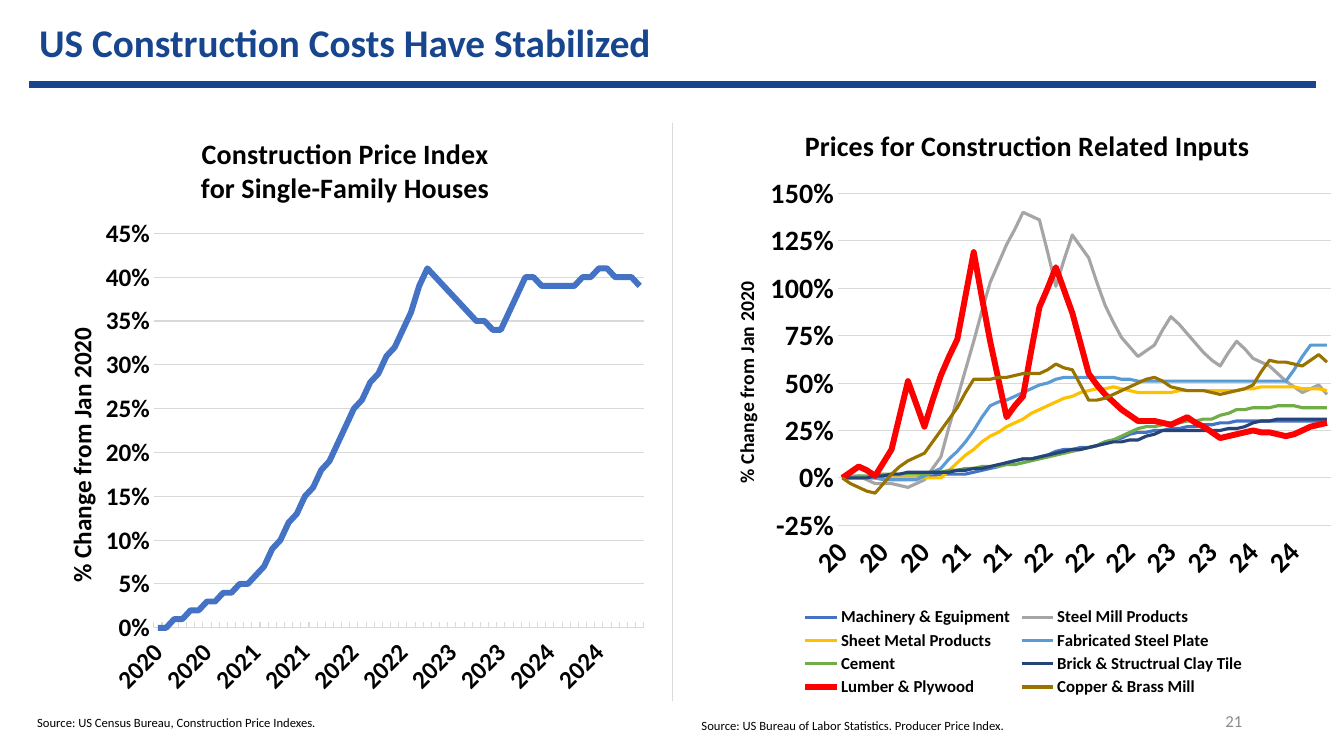
from lxml import etree
from pptx import Presentation
from pptx.chart.data import CategoryChartData
from pptx.dml.color import RGBColor
from pptx.enum.chart import XL_CHART_TYPE, XL_LEGEND_POSITION, XL_TICK_LABEL_POSITION, XL_TICK_MARK
from pptx.enum.shapes import MSO_CONNECTOR
from pptx.enum.text import MSO_ANCHOR, PP_ALIGN
from pptx.oxml.ns import qn
from pptx.util import Inches, Pt

LINE = XL_CHART_TYPE.LINE
BOTTOM = XL_LEGEND_POSITION.BOTTOM
LOW = XL_TICK_LABEL_POSITION.LOW
INSIDE, NO_TICK = XL_TICK_MARK.INSIDE, XL_TICK_MARK.NONE
STRAIGHT = MSO_CONNECTOR.STRAIGHT
LEFT, RIGHT = PP_ALIGN.LEFT, PP_ALIGN.RIGHT
TOP, MIDDLE = MSO_ANCHOR.TOP, MSO_ANCHOR.MIDDLE

THEME = {
    "font": "Calibri", "navy": "17468E", "black": "000000", "gray": "8C8C8C", "rule": "D9D9D9",
    "blue": "4472C4", "silver": "A5A5A5", "gold": "FFC000", "sky": "5B9BD5",
    "green": "70AD47", "ink": "264478", "red": "FF0000", "brown": "997300",
    "headline": 28, "chart_title": 20, "page": 12, "source": 9, "legend": 12,
    "thin": 2.25, "thick": 4.25,
}

MONTHS = 60
YEARS = [str(2020 + month // 12) for month in range(MONTHS)]
INDEX = [
    ("Series 1", "blue", "thick",
     [0, 1, 3, 4, 6, 10, 15, 19, 25, 29, 34, 41, 38, 35, 34, 40, 39, 39, 41, 40, 39]),
]
INPUTS = [
    ("Machinery & Eguipment", "blue", "thin",
     [0] * 4 + [2, 2, 5, 9, 11, 15, 16, 20, 24, 25, 27, 28] + [30] * 5),
    ("Steel Mill Products", "silver", "thin",
     [0, 1, -3, -3, -5, -1, 11, 42, 72, 103, 123, 140, 136, 101, 128, 116, 91, 74, 64, 70, 85, 76, 66, 59,
      72, 63, 59, 51, 45, 49, 44]),
    ("Sheet Metal Products", "gold", "thin",
     [0] * 5 + [12, 22, 29, 36, 42, 46, 48, 45, 45, 46, 46, 46, 48, 48, 47, 46]),
    ("Fabricated Steel Plate", "sky", "thin",
     [0, 0, -1, -1, 5, 19, 38, 43, 49] + [53] * 3 + [51] * 7 + [70] * 2),
    ("Cement", "green", "thin",
     [0, 1, 2, 2, 3, 5, 6, 7, 10, 13, 16, 20, 26, 28, 30, 31, 36, 37, 38, 37, 37]),
    ("Brick & Structrual Clay Tile", "ink", "thin",
     [0, 0, 2, 3, 3, 4, 6, 9, 11, 14, 16, 19, 20, 25, 25, 25, 26, 30, 31, 31, 31]),
    ("Lumber & Plywood", "red", "thick",
     [0, 6, 1, 15, 51, 27, 54, 73, 119, 72, 32, 43, 90, 111, 87, 55, 44, 36, 30, 30, 28, 32, 27, 21, 23, 25,
      24, 22, 25, 28, 29]),
    ("Copper & Brass Mill", "brown", "thin",
     [0, -5, -8, 2, 9, 13, 25, 37, 52, 52, 53, 55, 55, 60, 57, 41, 42, 46, 50, 53, 48, 46, 46, 44, 46, 49,
      62, 61, 59, 65, 61]),
]
CHARTS = [
    dict(box=(2.1, 14.27, 46.74, 79.07), title="Construction Price Index\nfor Single-Family Houses",
         cats=YEARS[:-3] + [""] * 3, series=INDEX, size=18, axis_title=18, skip=6, tick=INSIDE,
         scale=dict(minimum_scale=0, maximum_scale=0.45, major_unit=0.05),
         plot=(0.2, 0.21, 0.78, 0.66), title_at=(0.27, 0.04), axis_at=(0.05, 0.36), legend=None),
    dict(box=(52.36, 12.8, 47.64, 79.87), title="Prices for Construction Related Inputs",
         cats=[year[2:] for year in YEARS], series=INPUTS, size=20, axis_title=14, skip=5, tick=NO_TICK,
         scale=dict(minimum_scale=-0.25, maximum_scale=1.5, major_unit=0.25),
         plot=(0.21, 0.16, 0.77, 0.55), title_at=(0.15, 0.04), axis_at=(0.04, 0.3),
         legend=(0.15, 0.84, 0.7, 0.16)),
]
RULES = [((2.18, 11.2, 97.9, 11.2), "navy", 4.5), ((50, 16.27, 50, 92.67), "rule", 0.5)]
TEXTS = [
    ((2.18, 1.73, 81.7, 7.6), "US Construction Costs Have Stabilized", "headline", "navy", True, LEFT, TOP),
    ((70.67, 92.67, 22.51, 5.33), "21", "page", "gray", False, RIGHT, MIDDLE),
    ((2.03, 93.87, 25.21, 3.47), "Source: US Census Bureau, Construction Price Indexes.",
     "source", "black", False, LEFT, TOP),
    ((51.46, 94.27, 25.21, 3.47), "Source: US Bureau of Labor Statistics. Producer Price Index.",
     "source", "black", False, LEFT, TOP),
]


def style(font, size, color="black", bold=True):
    for name, value in dict(name=THEME["font"], size=Pt(size), bold=bold).items():
        setattr(font, name, value)
    font.color.rgb = RGBColor.from_string(THEME[color])


def place(el, index, shares, inner=False):
    for old in el.findall(qn("c:layout")):
        el.remove(old)
    layout = etree.Element(qn("c:layout"))
    manual = etree.SubElement(layout, qn("c:manualLayout"))
    settings = [("layoutTarget", "inner")] if inner else []
    settings += [("xMode", "edge"), ("yMode", "edge")] + list(zip("xywh", shares))
    for tag, value in settings:
        etree.SubElement(manual, qn("c:" + tag)).set("val", str(value))
    el.insert(index, layout)


prs = Presentation()
prs.slide_width, prs.slide_height = Inches(13.33), Inches(7.5)
UNITS = [prs.slide_width / 100, prs.slide_height / 100] * 2
s = prs.slides.add_slide(prs.slide_layouts[6])

for ends, color, width in RULES:
    line = s.shapes.add_connector(STRAIGHT, *[int(a * u) for a, u in zip(ends, UNITS)])
    line.line.color.rgb = RGBColor.from_string(THEME[color])
    line.line.width = Pt(width)
    etree.SubElement(line._element.spPr, qn("a:effectLst"))

for box, text, size, color, bold, align, anchor in TEXTS:
    tf = s.shapes.add_textbox(*[int(a * u) for a, u in zip(box, UNITS)]).text_frame
    tf.word_wrap, tf.vertical_anchor = True, anchor
    p = tf.paragraphs[0]
    p.alignment = align
    r = p.add_run()
    r.text = text
    style(r.font, THEME[size], color, bold)

for view in CHARTS:
    data = CategoryChartData(number_format="0%")
    data.categories = view["cats"]
    for name, color, weight, knots in view["series"]:
        step = MONTHS // (len(knots) - 1)
        values = []
        for month in range(MONTHS):
            k = month // step
            span = min(step, MONTHS - 1 - k * step)
            share = (month - k * step) / span
            values.append(round((knots[k] + share * (knots[k + 1] - knots[k])) / 100, 2))
        data.add_series(name, values)
    box = [int(a * u) for a, u in zip(view["box"], UNITS)]
    chart = s.shapes.add_chart(LINE, *box, data).chart
    style(chart.font, view["size"])
    chart.plots[0].vary_by_categories = False
    for series, (name, color, weight, knots) in zip(chart.plots[0].series, view["series"]):
        series.smooth = False
        series.format.line.color.rgb = RGBColor.from_string(THEME[color])
        series.format.line.width = Pt(THEME[weight])

    cat, val = chart.category_axis, chart.value_axis
    for axis, tick in ((cat, view["tick"]), (val, NO_TICK)):
        axis.major_tick_mark, axis.minor_tick_mark = tick, NO_TICK
        style(axis.tick_labels.font, view["size"])
    cat.tick_label_position = LOW
    cat._element.find(qn("c:txPr")).find(qn("a:bodyPr")).set("rot", "-2700000")
    skip = etree.Element(qn("c:tickLblSkip"))
    skip.set("val", str(view["skip"]))
    cat._element.find(qn("c:noMultiLvlLbl")).addprevious(skip)
    for name, value in view["scale"].items():
        setattr(val, name, value)
    val.tick_labels.number_format, val.tick_labels.number_format_is_linked = "0%", False
    val.format.line.fill.background()
    for rule in (cat.format.line, val.major_gridlines.format.line):
        rule.color.rgb = RGBColor.from_string(THEME["rule"])
        rule.width = Pt(0.75)

    for title, text, size, spot in (
        (chart.chart_title, view["title"], THEME["chart_title"], view["title_at"]),
        (val.axis_title, "% Change from Jan 2020", view["axis_title"], view["axis_at"]),
    ):
        title.text_frame.text = text
        for p in title.text_frame.paragraphs:
            style(p.runs[0].font, size)
        place(title._element, 1, spot)
    val.axis_title.text_frame._txBody.find(qn("a:bodyPr")).set("rot", "-5400000")
    place(chart._chartSpace.chart.plotArea, 0, view["plot"], inner=True)

    chart.has_legend = view["legend"] is not None
    if chart.has_legend:
        chart.legend.position, chart.legend.include_in_layout = BOTTOM, False
        style(chart.legend.font, THEME["legend"])
        place(chart.legend._element, 1, view["legend"])

prs.save("out.pptx")
